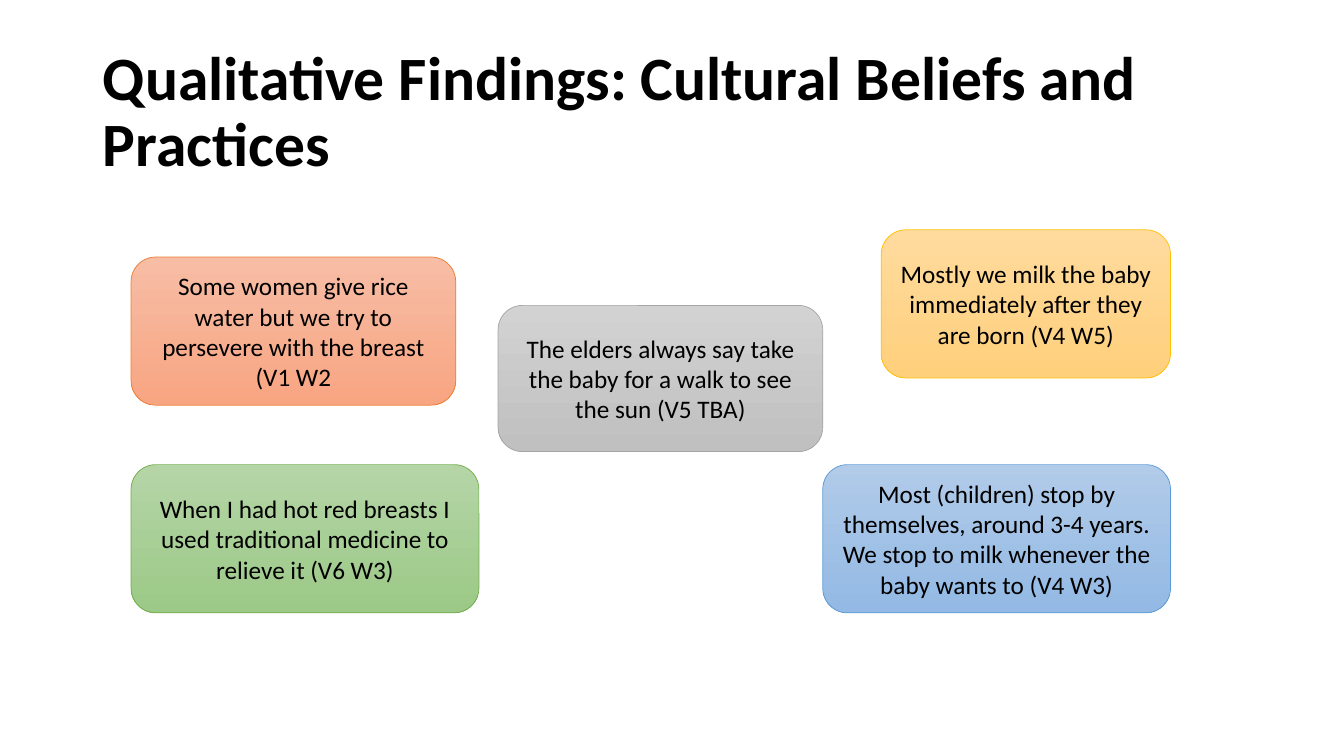
from dataclasses import dataclass

from pptx import Presentation
from pptx.dml.color import RGBColor
from pptx.enum import shapes, text
from pptx.util import Inches, Pt


@dataclass(frozen=True)
class Theme:
    font: str = "Calibri"
    ink: str = "000000"
    title_size: int = 44
    quote_size: int = 18
    line_width: float = 0.5
    # Each palette: gradient top, gradient bottom, outline
    orange: tuple = ("F7BDA5", "F8A582", "ED7D31")
    gold: tuple = ("FFDB9E", "FFD07C", "FFC000")
    green: tuple = ("B5D5A7", "9CC987", "70AD47")
    blue: tuple = ("B1CBE9", "93B9E4", "5B9BD5")
    gray: tuple = ("D2D2D2", "C0C0C0", "A5A5A5")


THEME = Theme()
LEFT, RIGHT = 1.3, 11.61
LOWER_TOP = 4.61
HEIGHT = 1.47
WIDE, MEDIUM, NARROW = 3.45, 3.22, 2.87

QUOTES = [
    ((LEFT, 2.55, MEDIUM, HEIGHT), THEME.orange,
     "Some women give rice water but we try to persevere with the breast (V1 W2"),
    ((RIGHT - NARROW, 2.28, NARROW, HEIGHT), THEME.gold,
     "Mostly we milk the baby immediately after they are born (V4 W5)"),
    ((LEFT, LOWER_TOP, WIDE, HEIGHT), THEME.green,
     "When I had hot red breasts I used traditional medicine to relieve it (V6 W3)"),
    ((RIGHT - WIDE, LOWER_TOP, WIDE, HEIGHT), THEME.blue,
     "Most (children) stop by themselves, around 3-4 years. "
     "We stop to milk whenever the baby wants to (V4 W3)"),
    ((4.94, 3.03, MEDIUM, 1.45), THEME.gray,
     "The elders always say take the baby for a walk to see the sun (V5 TBA)"),
]


def write(shape, words, size, alignment, bold=False):
    frame = shape.text_frame
    frame.word_wrap = True
    frame.auto_size = text.MSO_AUTO_SIZE.NONE
    frame.vertical_anchor = text.MSO_ANCHOR.MIDDLE
    frame.text = words
    paragraph = frame.paragraphs[0]
    paragraph.alignment = alignment
    font = paragraph.font
    font.name, font.size, font.bold = THEME.font, Pt(size), bold
    font.color.rgb = RGBColor.from_string(THEME.ink)
    return paragraph


def add_title(slide, box, words):
    title = slide.shapes.title
    title.left, title.top, title.width, title.height = map(Inches, box)
    paragraph = write(title, words, THEME.title_size, text.PP_ALIGN.LEFT, bold=True)
    paragraph.line_spacing = 0.9


def add_quote(slide, box, palette, words):
    quote = slide.shapes.add_shape(
        shapes.MSO_SHAPE.ROUNDED_RECTANGLE, *map(Inches, box))
    quote.shadow.inherit = False
    quote.fill.gradient()
    quote.fill.gradient_angle = 270
    for stop, position, color in zip(quote.fill.gradient_stops, (0, 1), palette):
        stop.position = position
        stop.color.rgb = RGBColor.from_string(color)
    quote.line.color.rgb = RGBColor.from_string(palette[-1])
    quote.line.width = Pt(THEME.line_width)
    write(quote, words, THEME.quote_size, text.PP_ALIGN.CENTER)


def main():
    presentation = Presentation()
    presentation.slide_width = Inches(13.33)
    presentation.slide_height = Inches(7.5)
    slide = presentation.slides.add_slide(presentation.slide_layouts[5])
    add_title(slide, (0.92, 0.4, 11.5, 1.45),
              "Qualitative Findings: Cultural Beliefs and Practices")
    for box, palette, words in QUOTES:
        add_quote(slide, box, palette, words)
    presentation.save("out.pptx")


if __name__ == "__main__":
    main()
